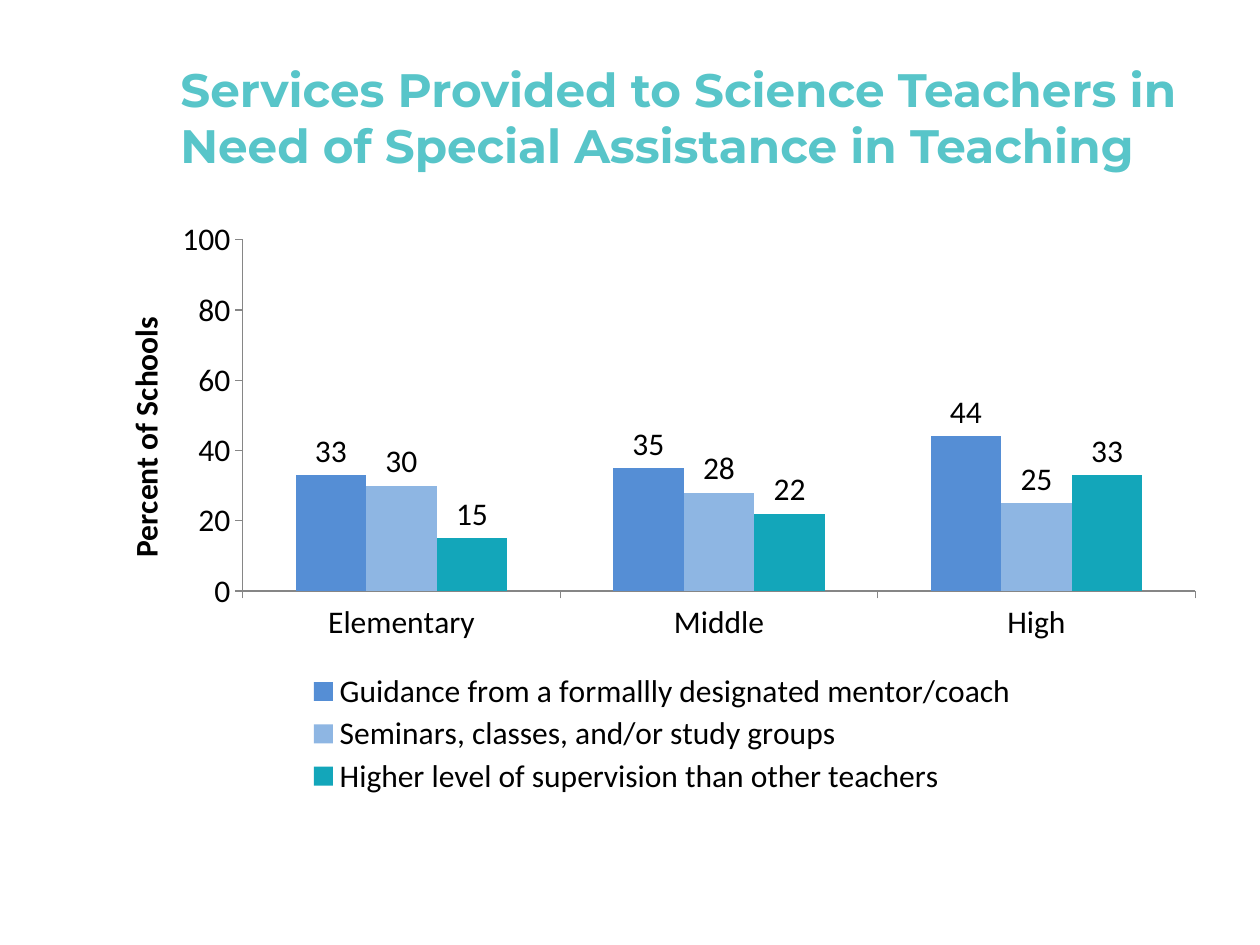
from lxml.etree import SubElement as Sub
from pptx import Presentation
from pptx.chart.data import CategoryChartData as Data
from pptx.dml.color import RGBColor as Rgb
from pptx.enum.chart import XL_CHART_TYPE as Kind
from pptx.enum.chart import XL_LABEL_POSITION as Spot
from pptx.enum.chart import XL_LEGEND_POSITION as Side
from pptx.enum.chart import XL_TICK_MARK as Tick
from pptx.enum.text import MSO_ANCHOR as Anchor
from pptx.oxml.ns import qn
from pptx.util import Inches, Pt

HUES = {"title": "58C5C9", "text": "000000", "axis": "868686",
        "mentor": "558ED5", "group": "8EB6E3", "watch": "13A6BA"}
LEVELS = ["Elementary", "Middle", "High"]
ROWS = [
    ("Guidance from a formallly designated mentor/coach", "mentor", (33, 35, 44)),
    ("Seminars, classes, and/or study groups", "group", (30, 28, 25)),
    ("Higher level of supervision than other teachers", "watch", (15, 22, 33)),
]


def hue(name):
    """Give the colour that a name stands for."""
    return Rgb.from_string(HUES[name])


def style(font, face="Calibri", size=18, color="text", bold=False):
    """Set the look of a font."""
    font.name, font.size, font.bold = face, Pt(size), bold
    font.color.rgb = hue(color)


def write(frame, text, **form):
    """Put formatted text in the first paragraph of a frame."""
    run = frame.paragraphs[0].add_run()
    run.text = text
    style(run.font, **form)


def place(node, index, inner=False, **parts):
    """Pin a chart part at shares of the chart's size."""
    for old in node.findall(qn("c:layout")):
        node.remove(old)
    lay = node.makeelement(qn("c:layout"), {})
    node.insert(index, lay)
    man = Sub(lay, qn("c:manualLayout"))
    if inner:
        Sub(man, qn("c:layoutTarget"), val="inner")
    for key in "xy":
        Sub(man, qn(f"c:{key}Mode"), val="edge")
    for key, share in parts.items():
        Sub(man, qn(f"c:{key}"), val=str(share))


class Deck:
    """Hold the style and the current slide."""

    def __init__(self, wide, high):
        """Start a deck with one blank slide."""
        self.show = Presentation()
        self.show.slide_width, self.show.slide_height = Inches(wide), Inches(high)
        self.slide = self.show.slides.add_slide(self.show.slide_layouts[6])

    def box(self, x, y, w, h):
        """Turn shares of the slide into lengths."""
        wide, high = self.show.slide_width, self.show.slide_height
        return int(x * wide), int(y * high), int(w * wide), int(h * high)

    def text(self, area, text, **form):
        """Add a wrapped text box, centred in height."""
        frame = self.slide.shapes.add_textbox(*self.box(*area)).text_frame
        frame.word_wrap = True
        frame.vertical_anchor = Anchor.MIDDLE
        write(frame, text, **form)

    def chart(self, area, cats, rows, label):
        """Add a clustered column chart with a legend below."""
        data = Data()
        data.categories = cats
        for name, _, vals in rows:
            data.add_series(name, vals)
        chart = self.slide.shapes.add_chart(
            Kind.COLUMN_CLUSTERED, *self.box(*area), data).chart
        style(chart.font)
        chart.has_title = False
        chart.has_legend = True
        chart.legend.position = Side.BOTTOM
        chart.legend.include_in_layout = False
        self.bars(chart.plots[0], rows)
        self.axes(chart, label)
        root = chart.element
        place(root.xpath("//c:plotArea")[0], 0, True, x=0.14, y=0.05, w=0.84, h=0.59)
        place(root.xpath("//c:legend")[0], 1, x=0.19, y=0.77, w=0.64, h=0.22)
        place(root.xpath("//c:valAx/c:title")[0], 1, x=0.03, y=0.17)

    def bars(self, plot, rows):
        """Colour and label the columns."""
        plot.gap_width, plot.overlap = 150, 0
        plot.vary_by_categories = False
        for bar, (_, color, _) in zip(plot.series, rows):
            bar.invert_if_negative = False
            bar.format.fill.solid()
            bar.format.fill.fore_color.rgb = hue(color)
            tags = bar.data_labels
            tags.show_value = True
            tags.position = Spot.OUTSIDE_END
            style(tags.font)

    def axes(self, chart, label):
        """Set ticks, lines, scale and the axis title."""
        for axis in (chart.category_axis, chart.value_axis):
            axis.has_major_gridlines = False
            axis.major_tick_mark = Tick.OUTSIDE
            axis.minor_tick_mark = Tick.NONE
            axis.format.line.color.rgb = hue("axis")
            axis.format.line.width = Pt(0.75)
            style(axis.tick_labels.font)
        axis.minimum_scale, axis.maximum_scale, axis.major_unit = 0, 100, 20
        axis.has_title = True
        write(axis.axis_title.text_frame, label, bold=True)


def main():
    """Build the slide and save it."""
    deck = Deck(10, 7.5)
    deck.chart((1 / 15, 2 / 9, 0.9, 0.63), LEVELS, ROWS, "Percent of Schools")
    deck.text((2 / 15, 0.04, 5 / 6, 1 / 6),
              "Services Provided to Science Teachers in "
              "Need of Special Assistance in Teaching",
              face="Montserrat", size=26.8, color="title", bold=True)
    deck.show.save("out.pptx")


if __name__ == "__main__":
    main()
